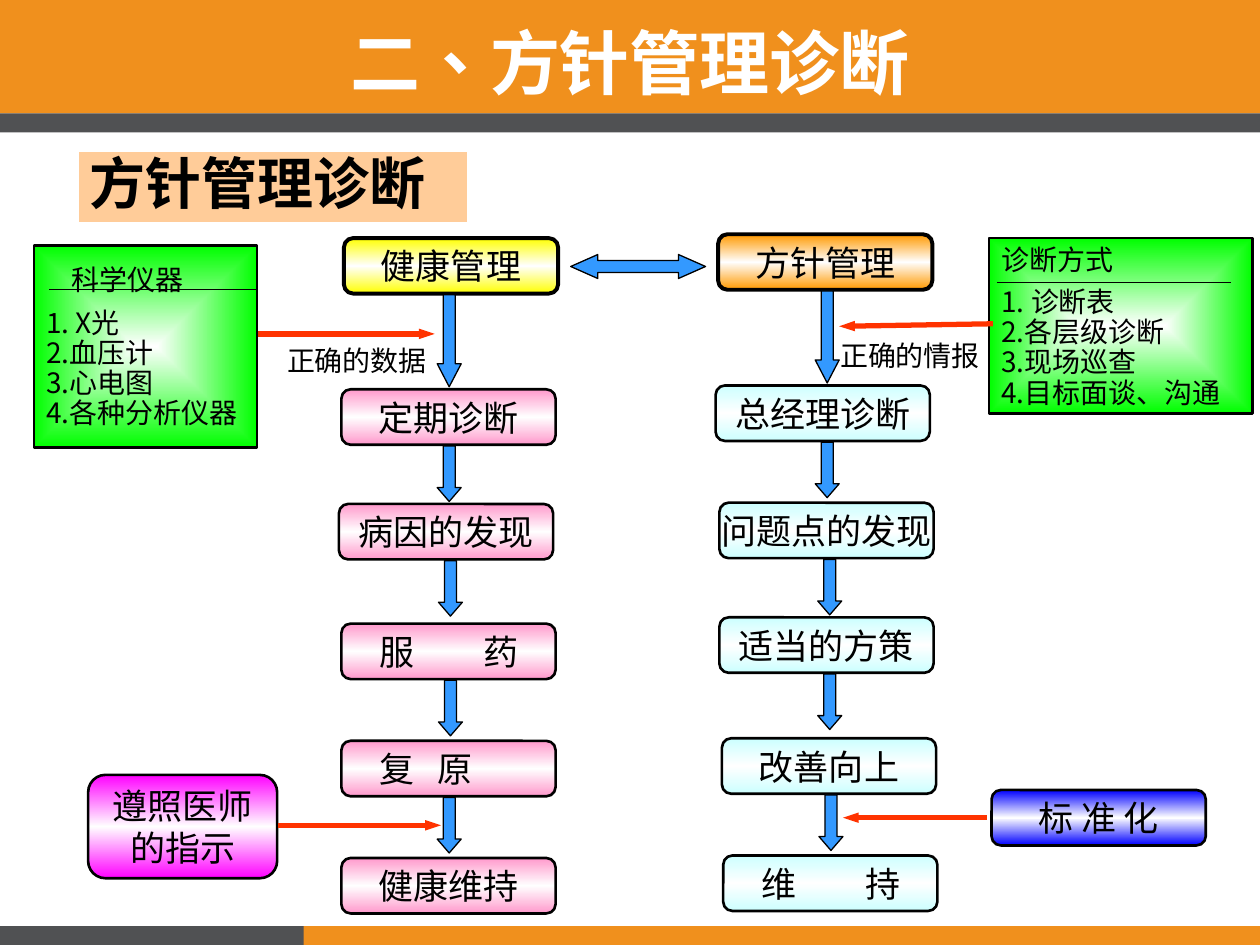
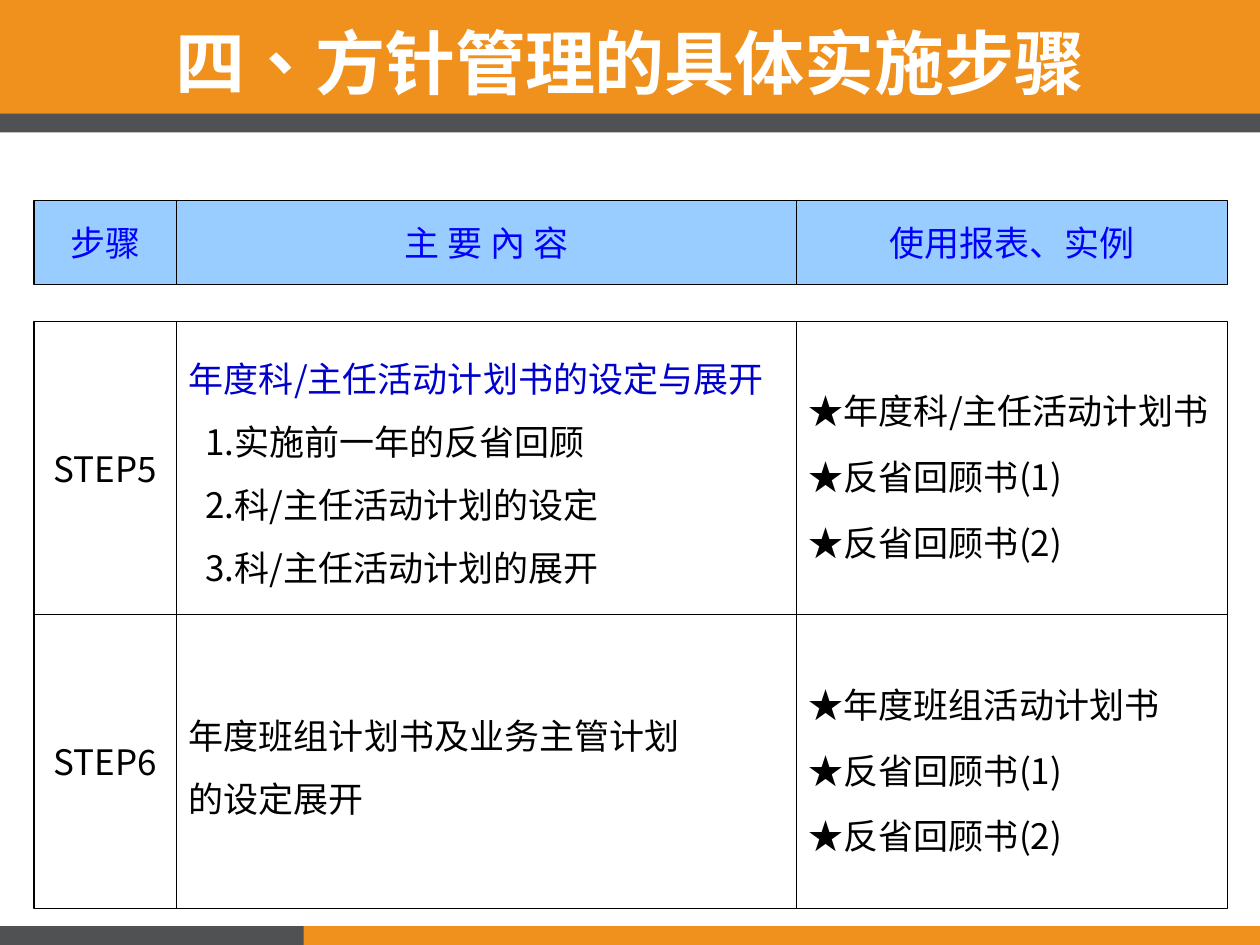
from dataclasses import dataclass
from itertools import accumulate
from typing import NamedTuple

from lxml import etree
from pptx import Presentation
from pptx.dml.color import RGBColor
from pptx.enum.shapes import MSO_CONNECTOR, MSO_SHAPE
from pptx.enum.text import MSO_ANCHOR, PP_ALIGN
from pptx.oxml import parse_xml
from pptx.oxml.ns import nsdecls, qn
from pptx.util import Inches, Pt


@dataclass(frozen=True)
class Theme:
    font: str = "Noto Sans CJK SC"
    orange: str = "F0901D"
    gray: str = "505153"
    black: str = "000000"
    white: str = "FFFFFF"
    blue: str = "3399FF"
    red: str = "FF3300"
    green: str = "00FF00"
    peach: str = "FFCC99"
    yellow: str = "FFFF00"
    amber: str = "FF9900"
    pink: str = "FF99CC"
    aqua: str = "CCFFFF"
    navy: str = "0000FF"
    violet: str = "FF00FF"
    sky: str = "99CCFF"
    topic: str = "0000CC"
    title: int = 40
    head: int = 32
    body: int = 20
    note: int = 16


T = Theme()


class Box(NamedTuple):
    x: float
    y: float
    w: float
    h: float


class Line(NamedTuple):
    text: str
    size: int = T.body
    color: str = T.black
    bold: bool = False
    align: PP_ALIGN = PP_ALIGN.LEFT
    lead: float = 1.0
    before: float = 0
    after: float = 0
    indent: float = 0
    tab: float = 0
    lang: str = "zh-CN"


class Step(NamedTuple):
    x: float
    y: float
    text: str
    arrow: float = 0  # left edge of the arrow below, 0 for none
    tab: float = 0    # gap stop for spread words


STEP_W, STEP_H, ARROW_W = 1.7, 0.44, 0.19

CARE = [
    Step(2.73, 1.89, "健康管理", 3.47),
    Step(2.71, 3.09, "定期诊断", 3.47),
    Step(2.69, 4.0, "病因的发现", 3.48),
    Step(2.71, 4.95, "服\t药", 3.48, 0.83),
    Step(2.71, 5.88, "复\t原", 3.47, 0.46),
    Step(2.71, 6.81, "健康维持"),
]
POLICY = [
    Step(5.7, 1.86, "方针管理", 6.47),
    Step(5.68, 3.06, "总经理诊断", 6.47),
    Step(5.71, 3.99, "问题点的发现", 6.49),
    Step(5.71, 4.9, "适当的方策", 6.49),
    Step(5.73, 5.86, "改善向上", 6.5),
    Step(5.74, 6.79, "维\t持", tab=0.83),
]


# Text
def write(frame, lines: list[Line]) -> None:
    for i, line in enumerate(lines):
        para = frame.paragraphs[0] if i == 0 else frame.add_paragraph()
        para.alignment = line.align
        para.line_spacing = line.lead
        para.space_before = Pt(line.before if i else 0)
        para.space_after = Pt(line.after)
        props = para._p.get_or_add_pPr()
        if line.indent:
            props.set("marL", str(Inches(line.indent)))
        if line.tab:
            stops = etree.SubElement(props, qn("a:tabLst"))
            etree.SubElement(stops, qn("a:tab"), pos=str(Inches(line.tab)), algn="l")
        run = para.add_run()
        run.text = line.text
        run.font.size = Pt(line.size)
        run.font.bold = line.bold
        run.font.color.rgb = RGBColor.from_string(line.color)
        run.font.name = T.font
        mark = run._r.get_or_add_rPr()
        mark.set("lang", line.lang)
        etree.SubElement(mark, qn("a:ea"), typeface=T.font)


def label(slide, box: Box, line: Line) -> None:
    frame = slide.shapes.add_textbox(*map(Inches, box)).text_frame
    frame.word_wrap = True
    write(frame, [line])


# Shapes
def blend(shape, stops: list[str], radial: bool = False) -> None:
    last = len(stops) - 1
    marks = "".join(
        f'<a:gs pos="{100000 * i // last}"><a:srgbClr val="{c}"/></a:gs>'
        for i, c in enumerate(stops))
    way = ('<a:path path="shape"><a:fillToRect l="50000" t="50000" r="50000" b="50000"/></a:path>'
           if radial else '<a:lin ang="5400000" scaled="1"/>')
    shape.fill.background()
    props = shape._element.spPr
    props.replace(props.find(qn("a:noFill")), parse_xml(
        f'<a:gradFill {nsdecls("a")} rotWithShape="1"><a:gsLst>{marks}</a:gsLst>{way}</a:gradFill>'))


def draw(slide, kind: MSO_SHAPE, box: Box, fill: str = "",
         edge: str = "", width: float = 0.75):
    shape = slide.shapes.add_shape(kind, *map(Inches, box))
    shape.shadow.inherit = False
    if fill:
        shape.fill.solid()
        shape.fill.fore_color.rgb = RGBColor.from_string(fill)
    else:
        shape.fill.background()
    if edge:
        shape.line.color.rgb = RGBColor.from_string(edge)
        shape.line.width = Pt(width)
    else:
        shape.line.fill.background()
    return shape


def fit(shape, lines: list[Line]):
    frame = shape.text_frame
    frame.word_wrap = False
    frame.vertical_anchor = MSO_ANCHOR.MIDDLE
    write(frame, lines)
    return frame


def pill(slide, box: Box, color: str, lines: list[Line], width: float = 1.5) -> None:
    shape = draw(slide, MSO_SHAPE.ROUNDED_RECTANGLE, box, edge=T.black, width=width)
    shape.adjustments[0] = 0.167
    blend(shape, [color, T.white, color])
    frame = fit(shape, lines)
    spread = bool(lines[0].tab)
    frame.word_wrap = spread
    frame.margin_left = Inches(0.28 if spread else 0)
    frame.margin_right = 0


def panel(slide, box: Box, head: Line, items: list[str]) -> None:
    shape = draw(slide, MSO_SHAPE.RECTANGLE, box, edge=T.black, width=1.5)
    blend(shape, [T.white, T.green], radial=True)
    rows = [Line(item, T.note, lead=0.9, before=0 if i else 7.2)
            for i, item in enumerate(items)]
    fit(shape, [head, *rows])


def block(slide, kind: MSO_SHAPE, box: Box, point: float) -> None:
    arrow = draw(slide, kind, box, T.blue, T.black)
    arrow.adjustments[0] = 0.5
    arrow.adjustments[1] = point


def link(slide, x1: float, y1: float, x2: float, y2: float,
         color: str, width: float, tip: bool = False) -> None:
    line = slide.shapes.add_connector(
        MSO_CONNECTOR.STRAIGHT, *map(Inches, (x1, y1, x2, y2)))
    line.line.color.rgb = RGBColor.from_string(color)
    line.line.width = Pt(width)
    if tip:
        etree.SubElement(line.line._get_or_add_ln(), qn("a:tailEnd"),
                         type="triangle", w="sm", len="med")
    etree.SubElement(line._element.spPr, qn("a:effectLst"))


def flow(slide, steps: list[Step], first: str, rest: str) -> None:
    for i, step in enumerate(steps):
        align = PP_ALIGN.LEFT if step.tab else PP_ALIGN.CENTER
        pill(slide, Box(step.x, step.y, STEP_W, STEP_H), rest if i else first,
             [Line(step.text, align=align, tab=step.tab)], 1.5 if i else 2.25)
        if step.arrow:
            tall = 0.44 if i else 0.73
            block(slide, MSO_SHAPE.DOWN_ARROW,
                  Box(step.arrow, step.y + STEP_H + 0.01, ARROW_W, tall),
                  0.25 * tall / ARROW_W)


# Row of framed cells
def band(slide, top: float, tall: float, cols: list[float],
         cells: list[list[Line]], fill: str = "") -> None:
    lefts = accumulate(cols, initial=0.27)
    for left, wide, lines in zip(lefts, cols, cells):
        fit(draw(slide, MSO_SHAPE.RECTANGLE, Box(left, top, wide, tall),
                 fill, T.black), lines)


# Shared bands and title
def page(deck, title: str):
    slide = deck.slides.add_slide(deck.slide_layouts[6])
    for box, color in [
        (Box(0, 0, 10, 0.9), T.orange),
        (Box(0, 0.9, 10, 0.15), T.gray),
        (Box(1.95, 7.35, 8.05, 0.15), T.orange),
        (Box(0, 7.35, 2.41, 0.15), T.gray),
    ]:
        draw(slide, MSO_SHAPE.RECTANGLE, box, color)
    label(slide, Box(0, 0.11, 10, 0.77),
          Line(title, T.title, T.white, True, PP_ALIGN.CENTER, lang="zh-TW"))
    return slide


def check(deck) -> None:
    slide = page(deck, "二、方针管理诊断")
    head = draw(slide, MSO_SHAPE.RECTANGLE, Box(0.61, 1.19, 3.11, 0.59),
                T.peach, T.white, 2.25)
    head.text_frame.vertical_anchor = MSO_ANCHOR.TOP
    write(head.text_frame, [Line("方针管理诊断", T.head, bold=True, lead=0.9)])

    # Two parallel flows
    flow(slide, CARE, T.yellow, T.pink)
    flow(slide, POLICY, T.amber, T.aqua)
    block(slide, MSO_SHAPE.LEFT_RIGHT_ARROW, Box(4.53, 2.02, 1.07, 0.19), 1.13)

    # Inputs on both sides
    panel(slide, Box(0.27, 1.95, 1.77, 1.6), Line("科学仪器", T.note, indent=0.2),
          ["1. X光", "2.血压计", "3.心电图", "4.各种分析仪器"])
    panel(slide, Box(7.85, 1.89, 2.09, 1.39), Line("诊断方式", T.note),
          ["1. 诊断表", "2.各层级诊断", "3.现场巡查", "4.目标面谈、沟通"])
    pill(slide, Box(7.87, 6.27, STEP_W, STEP_H), T.navy,
         [Line("标 准 化", align=PP_ALIGN.CENTER)])
    pill(slide, Box(0.7, 6.15, 1.5, 0.82), T.violet,
         [Line(text, align=PP_ALIGN.CENTER) for text in ("遵照医师", "的指示")])
    for ends in [(2.05, 2.65, 3.45, 2.65), (7.88, 2.57, 6.66, 2.59),
                 (2.21, 6.55, 3.5, 6.55), (7.83, 6.49, 6.69, 6.49)]:
        link(slide, *ends, T.red, 3, tip=True)
    for ends in [(0.39, 2.3, 2.05, 2.3), (7.91, 2.24, 9.77, 2.24)]:
        link(slide, *ends, T.black, 0.75)
    label(slide, Box(2.18, 2.68, 1.53, 0.37), Line("正确的数据", T.note))
    label(slide, Box(6.57, 2.64, 1.53, 0.37), Line("正确的情报", T.note))


def plan(deck) -> None:
    slide = page(deck, "四、方针管理的具体实施步骤")
    cols = [1.13, 4.92, 3.42]

    def mid(text: str, color: str = T.black) -> list[Line]:
        return [Line(text, color=color, align=PP_ALIGN.CENTER)]

    def task(text: str, color: str = T.black, indent: float = 0) -> Line:
        return Line(text, color=color, lead=1.25, before=3, after=3, indent=indent)

    def forms(first: str) -> list[Line]:
        return [Line("★" + text, lead=1.4, before=2, after=2)
                for text in (first, "反省回顾书(1)", "反省回顾书(2)")]

    band(slide, 1.59, 0.67, cols,
         [mid(text, T.navy) for text in ("步骤", "主 要 內 容", "使用报表、实例")], T.sky)
    band(slide, 2.55, 2.33, cols, [
        mid("STEP5"),
        [task("年度科/主任活动计划书的设定与展开", T.topic),
         *(task(text, indent=0.13) for text in (
             "1.实施前一年的反省回顾", "2.科/主任活动计划的设定", "3.科/主任活动计划的展开"))],
        forms("年度科/主任活动计划书"),
    ])
    band(slide, 4.88, 2.33, cols, [
        mid("STEP6"),
        [task("年度班组计划书及业务主管计划"), task("的设定展开")],
        forms("年度班组活动计划书"),
    ])


def main() -> None:
    deck = Presentation()
    deck.slide_width, deck.slide_height = Inches(10), Inches(7.5)
    check(deck)
    plan(deck)
    deck.save("out.pptx")


if __name__ == "__main__":
    main()
